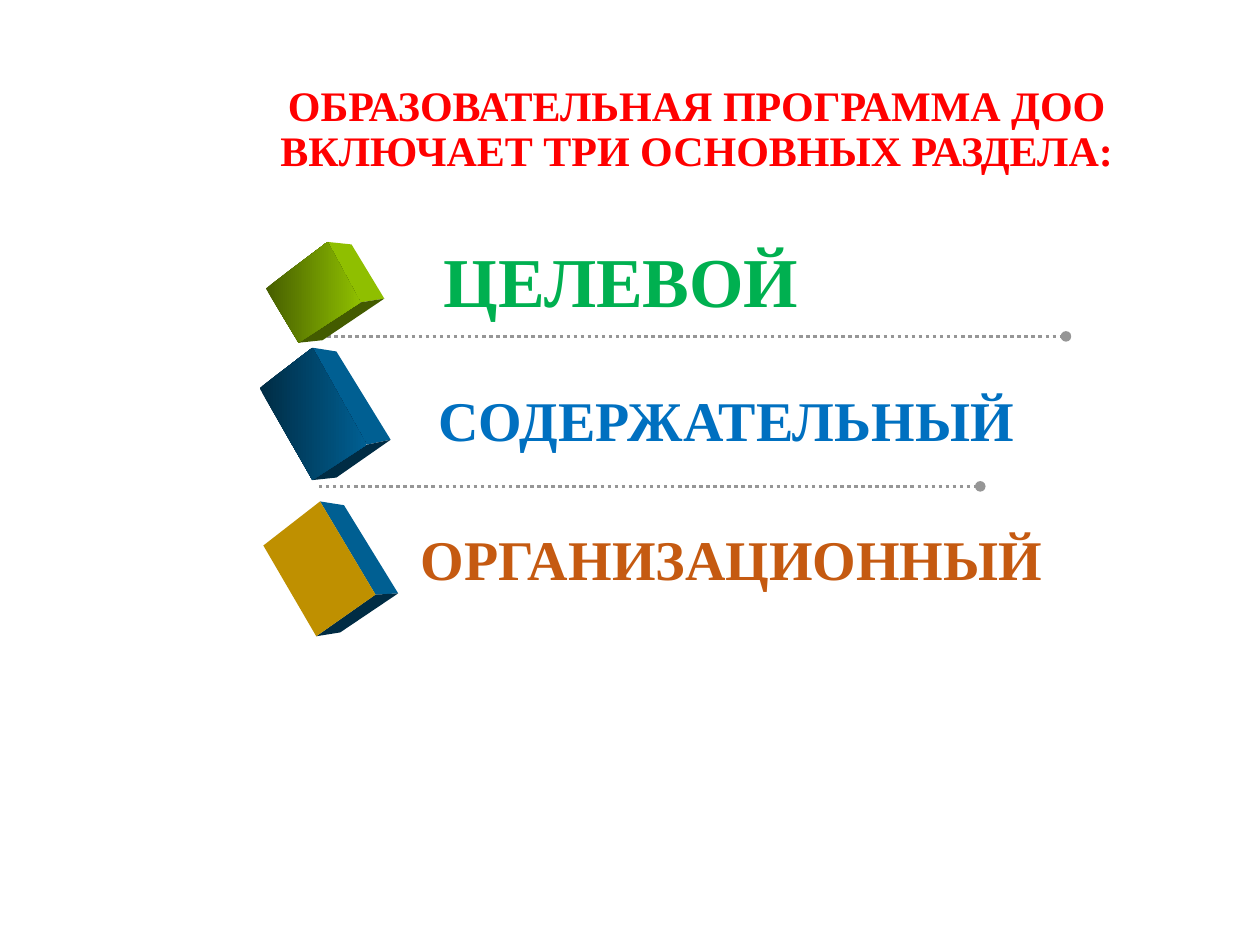
from lxml import etree
from pptx import Presentation
from pptx.dml.color import RGBColor
from pptx.enum.dml import MSO_LINE
from pptx.enum.shapes import MSO_CONNECTOR
from pptx.enum.text import MSO_ANCHOR, PP_ALIGN
from pptx.oxml.ns import qn
from pptx.util import Inches, Pt

FONT = "Times New Roman"

# Box (left, top, width, height), text, size, colour, alignment
LABELS = [
    ((3.31, 1.83, 3.24, 0.77), "ЦЕЛЕВОЙ", 40, "00B050", PP_ALIGN.CENTER),
    ((3.16, 3.01, 5.21, 0.64), "СОДЕРЖАТЕЛЬНЫЙ", 32, "0070C0", PP_ALIGN.CENTER),
    ((3.24, 4.11, 5.59, 0.64), "ОРГАНИЗАЦИОННЫЙ", 32, "C55A11", PP_ALIGN.LEFT),
]

# Front corners (left, top, right, bottom), rear corners (top, right, bottom),
# then the colours of the front, the side and the base
BLOCKS = [
    ([(2.11, 2.29), (2.6, 1.92), (2.86, 2.4), (2.37, 2.72)],
     [(2.79, 1.94), (3.05, 2.37), (2.56, 2.7)],
     ("465E00", "8FBF00"), "8FBF00", "435B00"),
    ([(2.06, 3.08), (2.48, 2.76), (2.91, 3.53), (2.48, 3.81)],
     [(2.67, 2.79), (3.1, 3.49), (2.67, 3.79)],
     ("002C44", "005F92"), "005F92", "002C44"),
    ([(2.09, 4.33), (2.54, 3.98), (2.98, 4.72), (2.51, 5.05)],
     [(2.73, 4.01), (3.16, 4.71), (2.7, 5.02)],
     ("BF9000",), "005F92", "002C44"),
]

# Left end, right end and height of each divider
DIVIDERS = [(2.54, 8.46, 2.67), (2.53, 7.78, 3.86)]


def color(hex_value):
    return RGBColor.from_string(hex_value)


def add_label(page, place, text, size, hex_value, align, spacing=1.0):
    box = page.shapes.add_textbox(*map(Inches, place))
    frame = box.text_frame
    frame.word_wrap = True
    frame.vertical_anchor = MSO_ANCHOR.MIDDLE
    frame.text = text
    para = frame.paragraphs[0]
    para.alignment = align
    para.line_spacing = spacing
    for span in para.runs:
        span.font.name = FONT
        span.font.size = Pt(size)
        span.font.bold = True
        span.font.color.rgb = color(hex_value)


def add_divider(page, left, right, y):
    line = page.shapes.add_connector(
        MSO_CONNECTOR.STRAIGHT, Inches(left), Inches(y), Inches(right), Inches(y))
    line.line.color.rgb = color("969696")
    line.line.width = Pt(2)
    line.line.dash_style = MSO_LINE.ROUND_DOT
    # Round end and no shadow
    properties = line.line._get_or_add_ln()
    etree.SubElement(properties, qn("a:tailEnd"), type="oval")
    etree.SubElement(properties.getparent(), qn("a:effectLst"))


def add_face(page, corners, colors):
    points = [(Inches(x), Inches(y)) for x, y in corners]
    builder = page.shapes.build_freeform(*points[0])
    builder.add_line_segments(points[1:], close=True)
    face = builder.convert_to_shape()
    face.shadow.inherit = False
    face.line.fill.background()
    if len(colors) == 1:
        face.fill.solid()
        face.fill.fore_color.rgb = color(colors[0])
        return
    face.fill.gradient()
    face.fill.gradient_angle = 0
    for stop, hex_value in zip(face.fill.gradient_stops, colors):
        stop.color.rgb = color(hex_value)


def add_block(page, front, rear, front_colors, side_color, base_color):
    _, top, right, bottom = front
    rear_top, rear_right, rear_bottom = rear
    add_face(page, [top, rear_top, rear_right, right], (side_color,))
    add_face(page, [bottom, right, rear_right, rear_bottom], (base_color,))
    add_face(page, front, front_colors)


def main():
    deck = Presentation()
    deck.slide_width, deck.slide_height = Inches(10), Inches(7.5)
    page = deck.slides.add_slide(deck.slide_layouts[6])

    # Title
    add_label(page, (1.45, 0.4, 8.16, 1.27),
              "ОБРАЗОВАТЕЛЬНАЯ ПРОГРАММА ДОО\vВКЛЮЧАЕТ ТРИ ОСНОВНЫХ РАЗДЕЛА:",
              24, "FF0000", PP_ALIGN.CENTER, 0.9)

    # Dividers behind the solid blocks, then the section names
    for divider in DIVIDERS:
        add_divider(page, *divider)
    for block in BLOCKS:
        add_block(page, *block)
    for label in LABELS:
        add_label(page, *label)

    deck.save("out.pptx")


if __name__ == "__main__":
    main()
